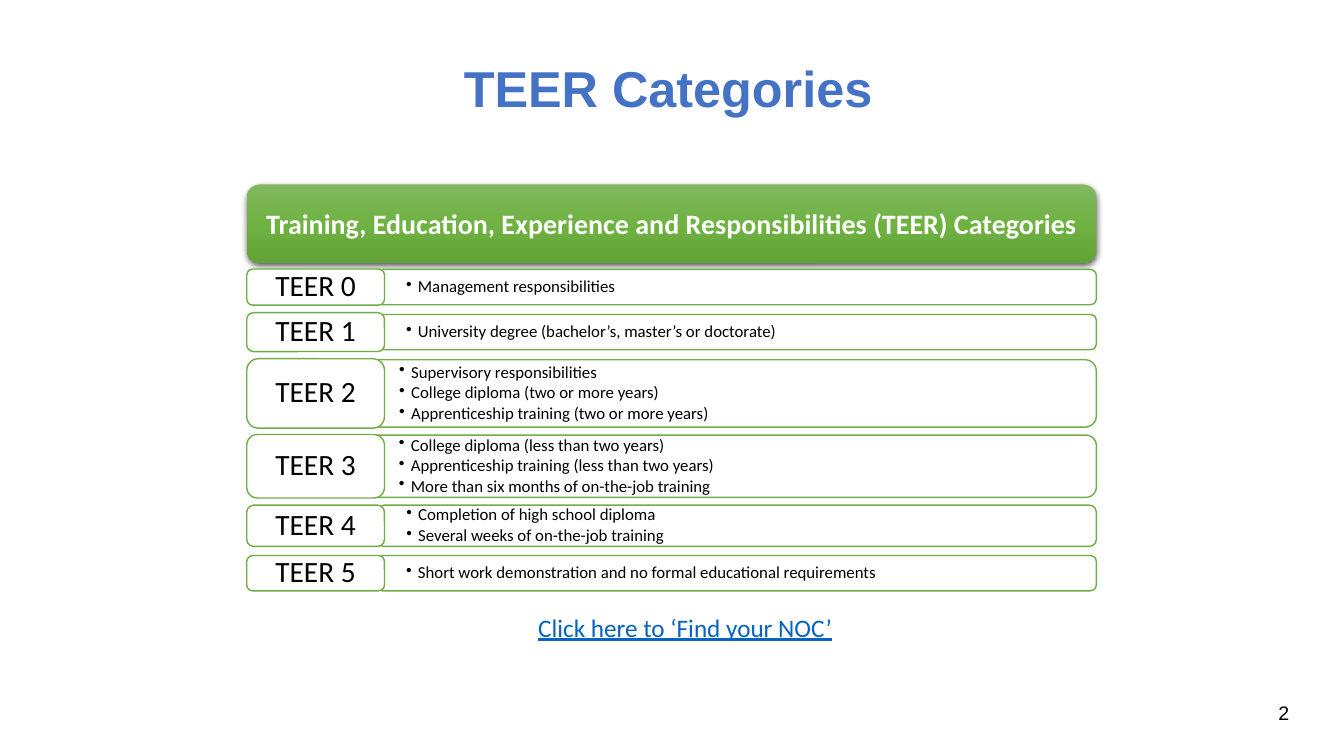
from copy import deepcopy

from lxml import etree
from pptx import Presentation
from pptx.dml.color import RGBColor
from pptx.enum.shapes import MSO_SHAPE
from pptx.enum.text import MSO_ANCHOR, MSO_AUTO_SIZE, PP_ALIGN
from pptx.oxml.ns import qn
from pptx.util import Cm, Pt

ROUNDED = MSO_SHAPE.ROUNDED_RECTANGLE
MIDDLE = MSO_ANCHOR.MIDDLE
NO_FIT = MSO_AUTO_SIZE.NONE
LEFT, CENTER, RIGHT = PP_ALIGN.LEFT, PP_ALIGN.CENTER, PP_ALIGN.RIGHT

COLORS = {
    "title": "4472C4", "green": "70AD47", "white": "FFFFFF",
    "black": "000000", "link": "0563C1",
    "grad_top": "81B861", "grad_mid": "6FB242", "grad_end": "62A336",
}
TITLE = {"name": "Arial", "size": Pt(36), "bold": True, "color": "title"}
HEADER = {"name": "Calibri", "size": Pt(20), "bold": True, "color": "white"}
LABEL = {"name": "Calibri", "size": Pt(21), "color": "black"}
ITEM = {"name": "Calibri", "size": Pt(12), "color": "black"}
LINK = {"name": "Calibri", "size": Pt(18), "underline": True, "color": "link"}
NUMBER = {"name": "Arial", "size": Pt(14), "color": "black"}

ROWS = [
    ("TEER 0", 6.78, 0.91, 0.89, 3.28, ["Management responsibilities"]),
    ("TEER 1", 7.88, 0.98, 0.89, 3.28,
     ["University degree (bachelor’s, master’s or doctorate)"]),
    ("TEER 2", 9.04, 1.75, 1.7, 3.07,
     ["Supervisory responsibilities", "College diploma (two or more years)",
      "Apprenticeship training (two or more years)"]),
    ("TEER 3", 10.95, 1.6, 1.57, 3.07,
     ["College diploma (less than two years)",
      "Apprenticeship training (less than two years)",
      "More than six months of on-the-job training"]),
    ("TEER 4", 12.73, 1.04, 1.04, 3.28,
     ["Completion of high school diploma", "Several weeks of on-the-job training"]),
    ("TEER 5", 14, 0.89, 0.89, 3.28,
     ["Short work demonstration and no formal educational requirements"]),
]


def rgb(name):
    """Return the named colour."""
    return RGBColor.from_string(COLORS[name])


def set_frame(tf, left=0.25, right=0.25, top=0.13, bottom=0.13):
    """Set the wrapping, anchor and margins of a text frame."""
    values = {"word_wrap": True, "auto_size": NO_FIT, "vertical_anchor": MIDDLE,
              "margin_left": Cm(left), "margin_right": Cm(right),
              "margin_top": Cm(top), "margin_bottom": Cm(bottom)}
    for key, value in values.items():
        setattr(tf, key, value)


def write(p, text, style, align):
    """Write one formatted run into a paragraph."""
    p.alignment = align
    r = p.add_run()
    r.text = text
    for key, value in style.items():
        if key == "color":
            r.font.color.rgb = rgb(value)
        else:
            setattr(r.font, key, value)


def add_card(slide, left, top, width, height):
    """Add a white rounded box with a green outline."""
    sp = slide.shapes.add_shape(ROUNDED, Cm(left), Cm(top), Cm(width), Cm(height))
    sp.shadow.inherit = False
    sp.fill.solid()
    sp.fill.fore_color.rgb = rgb("white")
    sp.line.color.rgb = rgb("green")
    sp.line.width = Pt(1)
    return sp


def add_title(slide, left, top, width, height):
    """Place and format the title placeholder."""
    sp = slide.shapes.title
    sp.left, sp.top, sp.width, sp.height = Cm(left), Cm(top), Cm(width), Cm(height)
    set_frame(sp.text_frame)
    p = sp.text_frame.paragraphs[0]
    p.line_spacing = 0.9
    write(p, "TEER Categories", TITLE, CENTER)


def add_header(slide, left, top, width, height):
    """Add the green gradient banner with its soft shadow."""
    sp = add_card(slide, left, top, width, height)
    sp.line.fill.background()
    sp.fill.gradient()
    sp.fill.gradient_angle = 270
    stops = sp._element.spPr.find(".//" + qn("a:gsLst"))
    stops.append(deepcopy(stops[0]))
    for i, (stop, name) in enumerate(zip(sp.fill.gradient_stops,
                                         ("grad_top", "grad_mid", "grad_end"))):
        stop.position = i / 2
        stop.color.rgb = rgb(name)
    effects = sp._element.spPr.find(qn("a:effectLst"))
    shadow = etree.SubElement(effects, qn("a:outerShdw"), blurRad=str(Pt(4.5)),
                              dist=str(Pt(1.5)), dir="5400000", rotWithShape="0")
    color = etree.SubElement(shadow, qn("a:srgbClr"), val=COLORS["black"])
    etree.SubElement(color, qn("a:alpha"), val="63000")
    set_frame(sp.text_frame)
    write(sp.text_frame.paragraphs[0],
          "Training, Education, Experience and Responsibilities (TEER) Categories",
          HEADER, CENTER)


def add_items(tf, items):
    """Fill a text frame with a bulleted list."""
    for i, item in enumerate(items):
        p = tf.paragraphs[0] if i == 0 else tf.add_paragraph()
        pPr = p._p.get_or_add_pPr()
        pPr.set("marL", str(Cm(0.3)))
        pPr.set("indent", str(-Cm(0.3)))
        etree.SubElement(pPr, qn("a:buChar"), char="•")
        p.line_spacing = 0.9
        p.space_after = Pt(1.8)
        write(p, item, ITEM, LEFT)


def add_row(slide, left, width, row):
    """Add one category: its list box with the label over its left end."""
    name, top, label_height, box_height, offset, items = row
    box = add_card(slide, left + offset, top + (label_height - box_height) / 2,
                   width - offset, box_height)
    set_frame(box.text_frame, 0.69, 0.74, 0, 0)
    add_items(box.text_frame, items)
    label = add_card(slide, left, top, 3.47, label_height)
    set_frame(label.text_frame, top=0, bottom=0)
    p = label.text_frame.paragraphs[0]
    p.line_spacing = 0.9
    write(p, name, LABEL, CENTER)


def add_text(slide, left, top, width, height, text, style, align):
    """Add a one-line text box."""
    sp = slide.shapes.add_textbox(Cm(left), Cm(top), Cm(width), Cm(height))
    set_frame(sp.text_frame)
    write(sp.text_frame.paragraphs[0], text, style, align)


def build_categories(prs):
    """Build the slide of TEER categories."""
    slide = prs.slides.add_slide(prs.slide_layouts[5])
    left, width = 6.22, 21.41
    add_title(slide, 4.85, 1.04, 23.98, 2.51)
    add_header(slide, left, 4.65, width, 1.98)
    for row in ROWS:
        add_row(slide, left, width, row)
    add_text(slide, 10.69, 15.29, 13.16, 1.02,
             "Click here to ‘Find your NOC’", LINK, CENTER)
    add_text(slide, 28.07, 17.53, 4.67, 0.86, "2", NUMBER, RIGHT)


def main():
    """Create and save the presentation."""
    prs = Presentation()
    prs.slide_width, prs.slide_height = Cm(33.87), Cm(19.05)
    build_categories(prs)
    prs.save("out.pptx")


if __name__ == "__main__":
    main()
